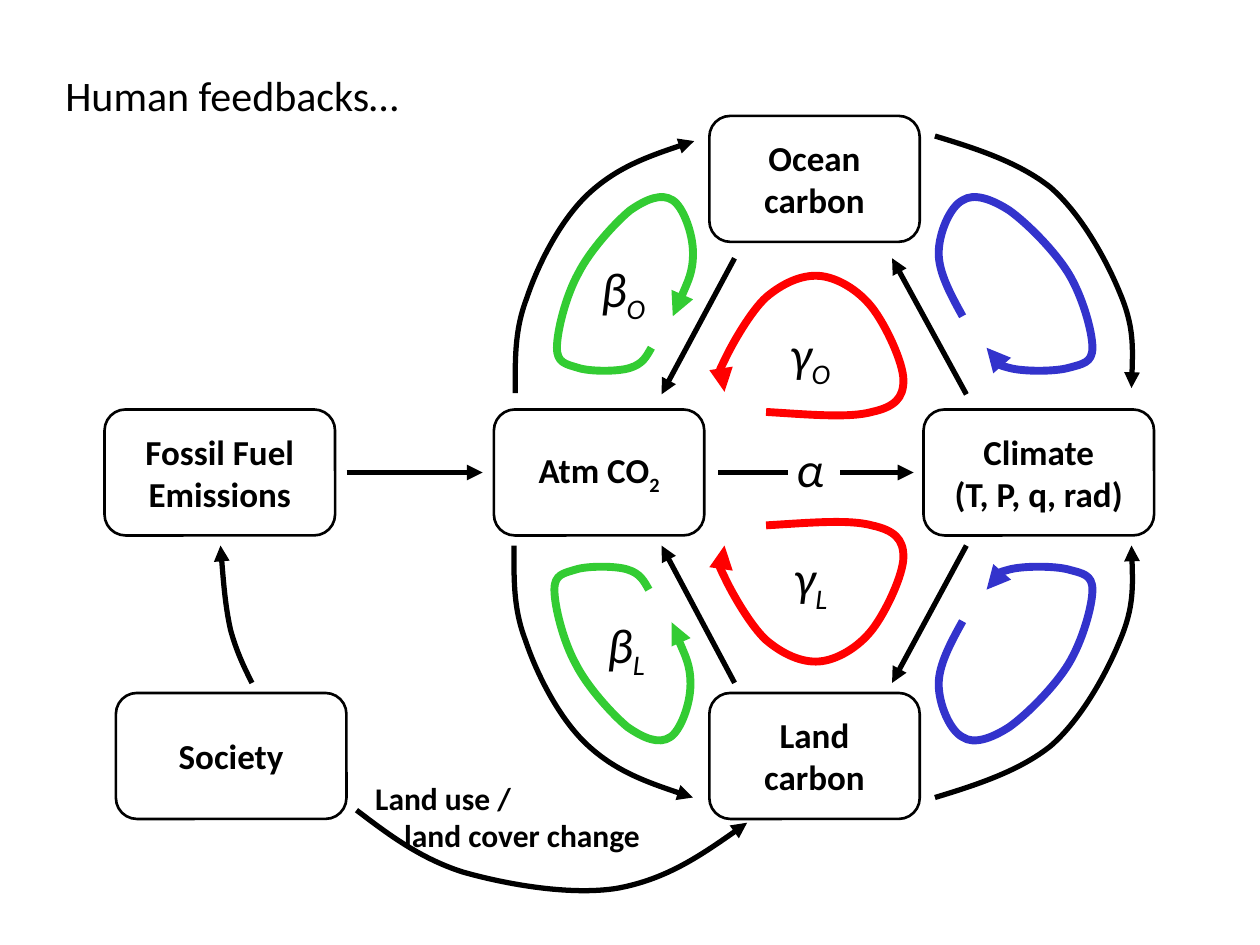
from lxml.etree import SubElement
from pptx import Presentation
from pptx.dml.color import RGBColor
from pptx.enum.shapes import MSO_CONNECTOR, MSO_SHAPE
from pptx.enum.text import MSO_ANCHOR, MSO_AUTO_SIZE, PP_ALIGN
from pptx.oxml.ns import qn
from pptx.util import Inches, Pt

BLACK = RGBColor(0x00, 0x00, 0x00)
WHITE = RGBColor(0xFF, 0xFF, 0xFF)
GREEN = RGBColor(0x33, 0xCC, 0x33)
BLUE = RGBColor(0x33, 0x33, 0xCC)
RED = RGBColor(0xFF, 0x00, 0x00)

LAND_UPTAKE = [(4.08, 4.33), (4.08, 4.58), (4.07, 4.82), (4.17, 5.08), (4.26, 5.35),
               (4.44, 5.71), (4.67, 5.92), (4.89, 6.12), (5.19, 6.23), (5.5, 6.33)]
LAND_CLIMATE = [(7.42, 6.33), (7.75, 6.23), (8.09, 6.12), (8.34, 5.92), (8.58, 5.71),
                (8.78, 5.35), (8.89, 5.08), (9, 4.82), (8.99, 4.58), (8.98, 4.33)]
BETA_LOOP = [(5.15, 4.68), (5.11, 4.61), (5.08, 4.55), (4.98, 4.52), (4.89, 4.49),
             (4.66, 4.49), (4.57, 4.52), (4.47, 4.55), (4.4, 4.56), (4.4, 4.68),
             (4.4, 4.81), (4.47, 5.09), (4.57, 5.27), (4.66, 5.45), (4.86, 5.67),
             (4.98, 5.77), (5.11, 5.86), (5.23, 5.91), (5.32, 5.85), (5.4, 5.8),
             (5.48, 5.59), (5.48, 5.43), (5.48, 5.28), (5.4, 5.11), (5.32, 4.93)]
CLIMATE_LOOP = [(7.64, 4.93), (7.54, 5.11), (7.45, 5.28), (7.45, 5.43), (7.45, 5.59),
                (7.54, 5.8), (7.64, 5.85), (7.73, 5.91), (7.87, 5.86), (8.01, 5.77),
                (8.15, 5.67), (8.37, 5.45), (8.48, 5.27), (8.59, 5.09), (8.67, 4.81),
                (8.67, 4.68), (8.67, 4.56), (8.59, 4.55), (8.48, 4.52), (8.37, 4.49),
                (8.12, 4.49), (8.01, 4.52), (7.9, 4.55), (7.86, 4.61), (7.83, 4.68)]
GAMMA_LOOP = [(6.08, 4.17), (6.41, 4.15), (6.74, 4.12), (6.92, 4.17), (7.1, 4.21),
              (7.17, 4.28), (7.17, 4.42), (7.17, 4.56), (7.03, 4.86), (6.92, 5),
              (6.81, 5.14), (6.64, 5.24), (6.5, 5.25), (6.36, 5.26), (6.21, 5.19),
              (6.08, 5.08), (5.96, 4.97), (5.81, 4.71), (5.75, 4.58), (5.69, 4.46),
              (5.72, 4.4), (5.75, 4.33)]
LAND_USE = [(2.83, 6.43), (3.08, 6.62), (3.33, 6.81), (3.67, 6.92), (4.02, 7.02),
            (4.53, 7.11), (4.9, 7.05), (5.28, 6.98), (5.61, 6.76), (5.93, 6.53)]
FUEL_USE = [(2, 5.42), (1.94, 5.3), (1.88, 5.18), (1.83, 5), (1.79, 4.82),
            (1.77, 4.58), (1.75, 4.33)]


def mirror(points, y_sum, shift=0):
    return [(x + shift, y_sum - y) for x, y in points]


def write(frame, text, size=20, bold=False, italic=False, align=PP_ALIGN.LEFT,
          wrap=True, last_indent=0):
    frame.word_wrap = wrap
    for index, line in enumerate(text.split("\n")):
        paragraph = frame.paragraphs[0] if index == 0 else frame.add_paragraph()
        paragraph.alignment = align
        base, _, subscript = line.partition("_")
        for part, offset in ((base, None), (subscript, "-25000")):
            if not part:
                continue
            run = paragraph.add_run()
            run.text = part
            font = run.font
            font.name, font.size = "Calibri", Pt(size)
            font.bold, font.italic = bold, italic
            font.color.rgb = BLACK
            if offset:
                run._r.get_or_add_rPr().set("baseline", offset)
    if last_indent:
        paragraph._p.get_or_add_pPr().set("marL", str(Inches(last_indent)))


class FeedbackDiagram:
    box_height = 1
    box_line = 1.5
    arrow_width = 3
    loop_width = 4.5

    def __init__(self, slide):
        self.shapes = slide.shapes

    def stroke(self, line, color, width, arrow=True):
        line.color.rgb = color
        line.width = Pt(width)
        if arrow:
            SubElement(line._get_or_add_ln(), qn("a:tailEnd"), type="triangle")

    def box(self, text, left, top, width, wrap=True):
        box = self.shapes.add_shape(
            MSO_SHAPE.ROUNDED_RECTANGLE, Inches(left), Inches(top),
            Inches(width), Inches(self.box_height))
        box.shadow.inherit = False
        box.fill.background()
        self.stroke(box.line, BLACK, self.box_line, arrow=False)
        box.text_frame.vertical_anchor = MSO_ANCHOR.MIDDLE
        write(box.text_frame, text, bold=True, align=PP_ALIGN.CENTER, wrap=wrap)

    def label(self, text, left, top, width, height, fill=None, **style):
        label = self.shapes.add_textbox(
            Inches(left), Inches(top), Inches(width), Inches(height))
        if fill is not None:
            label.fill.solid()
            label.fill.fore_color.rgb = fill
        write(label.text_frame, text, **style)
        label.text_frame.auto_size = MSO_AUTO_SIZE.SHAPE_TO_FIT_TEXT

    def symbol(self, text, left, top, width=0.61, fill=None):
        self.label(text, left, top, width, 0.57, fill, size=28, italic=True)

    def arrow(self, start, end, arrow=True):
        connector = self.shapes.add_connector(
            MSO_CONNECTOR.STRAIGHT, *(Inches(value) for value in (*start, *end)))
        self.stroke(connector.line, BLACK, self.arrow_width, arrow)
        SubElement(connector._element.spPr, qn("a:effectLst"))

    def curve(self, points, color=BLACK, width=arrow_width):
        start, *rest = [(Inches(x), Inches(y)) for x, y in points]
        builder = self.shapes.build_freeform(*start)
        builder.add_line_segments(rest, close=False)
        curve = builder.convert_to_shape()
        segments = curve._element.xpath(".//a:lnTo")
        for first in range(0, len(segments), 3):
            outline = segments[first].getparent()
            bezier = SubElement(outline, qn("a:cubicBezTo"))
            for segment in segments[first:first + 3]:
                bezier.append(segment[0])
                outline.remove(segment)
        curve.shadow.inherit = False
        curve.fill.background()
        self.stroke(curve.line, color, width)

    def loop(self, points, color):
        self.curve(points, color, self.loop_width)


def main():
    presentation = Presentation()
    presentation.slide_width, presentation.slide_height = Inches(10), Inches(7.5)
    diagram = FeedbackDiagram(presentation.slides.add_slide(presentation.slide_layouts[6]))

    diagram.box("Fossil Fuel Emissions", 0.83, 3.25, 1.83)
    diagram.box("Atm CO_2", 3.92, 3.25, 1.67, wrap=False)
    diagram.box("Climate\n(T, P, q, rad)", 7.33, 3.25, 1.83, wrap=False)
    diagram.box("Ocean carbon", 5.63, 0.92, 1.67)
    diagram.box("Land carbon", 5.63, 5.5, 1.67)
    diagram.box("Society", 0.92, 5.5, 1.83)

    for points in (LAND_UPTAKE, mirror(LAND_UPTAKE, 7.45, 0.01),
                   LAND_CLIMATE, mirror(LAND_CLIMATE, 7.41), LAND_USE, FUEL_USE):
        diagram.curve(points)

    for start, end in (((5.83, 5.42), (5.25, 4.33)), ((5.83, 2.05), (5.25, 3.13)),
                       ((7.67, 4.33), (7.08, 5.42)), ((7.67, 3.13), (7.08, 2.05)),
                       ((2.75, 3.75), (3.83, 3.75)), ((6.67, 3.75), (7.25, 3.75))):
        diagram.arrow(start, end)
    diagram.arrow((5.7, 3.75), (6.25, 3.75), arrow=False)

    for points, color, shift in ((BETA_LOOP, GREEN, 0.02), (CLIMATE_LOOP, BLUE, 0),
                                 (GAMMA_LOOP, RED, 0)):
        diagram.loop(points, color)
        diagram.loop(mirror(points, 7.44, shift), color)

    diagram.symbol("α", 6.22, 3.43, width=0.36)
    diagram.symbol("β_L", 4.72, 4.83, fill=WHITE)
    diagram.symbol("β_O", 4.67, 2, width=0.69)
    diagram.symbol("γ_L", 6.2, 4.3)
    diagram.symbol("γ_O", 6.17, 2.52)
    diagram.label("Land use /\nland cover change", 2.88, 6.13, 2.67, 0.7,
                  size=18, bold=True, wrap=False, last_indent=0.23)
    diagram.label("Human feedbacks…", 0.42, 0.5, 3.75, 0.5, size=24)

    presentation.save("out.pptx")


if __name__ == "__main__":
    main()
